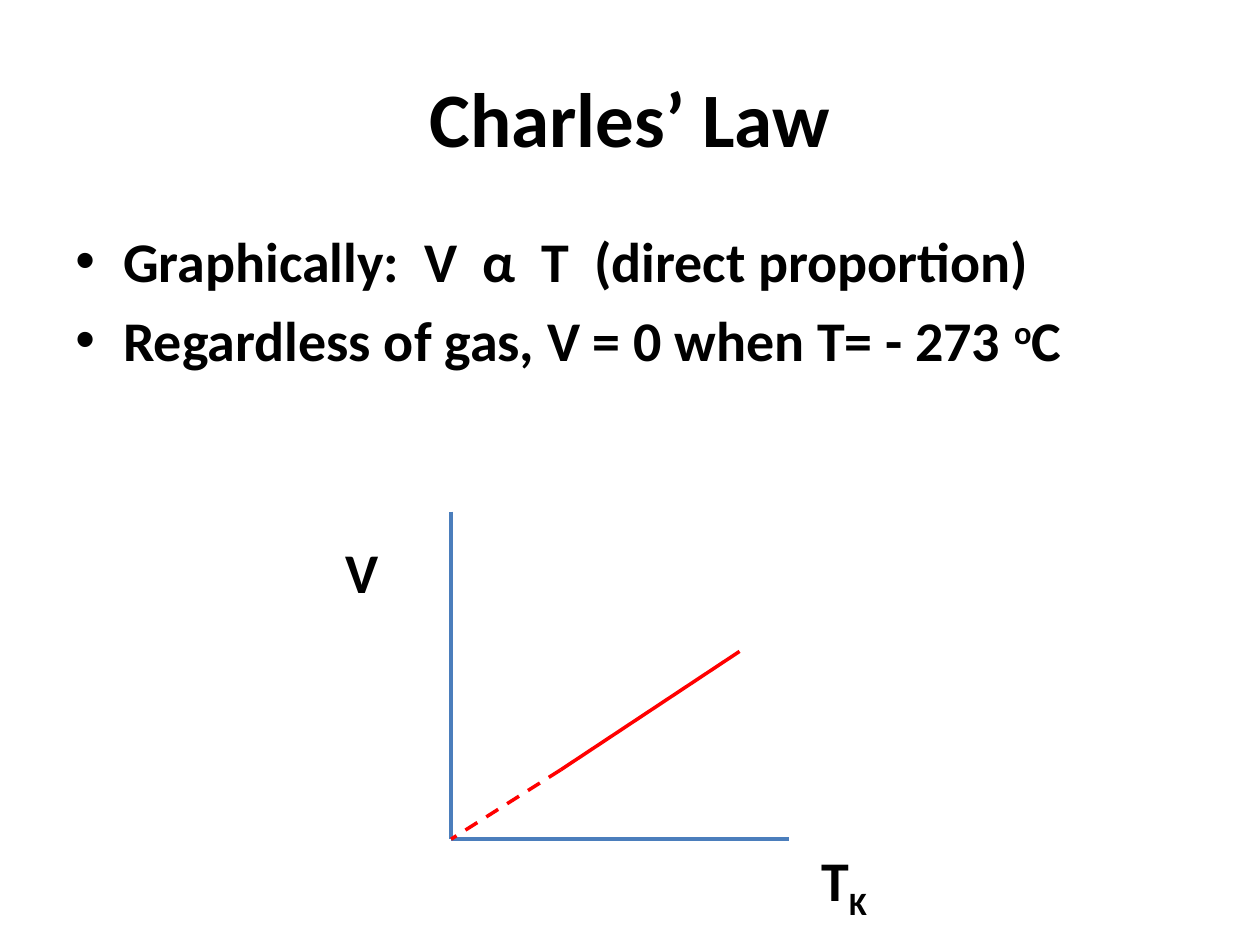
import pptx
import pptx.dml.color
import pptx.enum.dml
import pptx.enum.shapes
import pptx.enum.text
import pptx.oxml.ns
import pptx.util
from lxml import etree

Inches = pptx.util.Inches
Pt = pptx.util.Pt
BLACK = pptx.dml.color.RGBColor(0x00, 0x00, 0x00)
AXIS_BLUE = pptx.dml.color.RGBColor(0x4B, 0x7E, 0xBC)
PLOT_RED = pptx.dml.color.RGBColor(0xFF, 0x00, 0x00)
FONT = "Calibri"
SUPERSCRIPT, SUBSCRIPT = 30000, -25000

TITLE = [("Charles’ Law", 0)]
BULLETS = [
    [("Graphically:  V  α  T  (direct proportion)", 0)],
    [("Regardless of gas, V = 0 when T= - 273 ", 0), ("o", SUPERSCRIPT), ("C", 0)],
]
ORIGIN = (3.58, 6.66)
VOLUME_TOP = (3.58, 4.06)
TEMPERATURE_END = (6.26, 6.66)
MEASURED_START = (4.45, 6.11)
MEASURED_END = (5.87, 5.17)
AXES = [(VOLUME_TOP, ORIGIN), (TEMPERATURE_END, ORIGIN)]
AXIS_LABELS = [
    ((2.64, 4.22), [("V", 0)]),
    ((6.42, 6.66), [("T", 0), ("K", SUBSCRIPT)]),
]
LABEL_SIZE = (0.87, 0.64)


def write_paragraph(para, spans, size):
    para.font.name = FONT
    para.font.size = Pt(size)
    para.font.bold = True
    para.font.color.rgb = BLACK
    for text, baseline in spans:
        span = para.add_run()
        span.text = text
        if baseline:
            span.font._element.set("baseline", str(baseline))


def add_bullet(para):
    properties = para._p.get_or_add_pPr()
    properties.set("marL", str(Inches(0.38)))
    properties.set("indent", str(-Inches(0.38)))
    para.space_before = Pt(6.4)
    bullet_font = etree.Element(pptx.oxml.ns.qn("a:buFont"), typeface="Arial")
    bullet = etree.Element(pptx.oxml.ns.qn("a:buChar"), char="•")
    position = len(properties.findall(pptx.oxml.ns.qn("a:spcBef")))
    properties.insert(position, bullet_font)
    properties.insert(position + 1, bullet)


def add_text_box(shapes, position, size):
    box = shapes.add_textbox(*map(Inches, position + size))
    box.text_frame.word_wrap = True
    return box


def add_line(shapes, start, end, color, dash=None):
    line = shapes.add_connector(
        pptx.enum.shapes.MSO_CONNECTOR.STRAIGHT, *map(Inches, start + end))
    line.line.color.rgb = color
    line.line.width = Pt(2)
    if dash is not None:
        line.line.dash_style = dash
    etree.SubElement(line._element.spPr, pptx.oxml.ns.qn("a:effectLst"))


def main():
    deck = pptx.Presentation()
    deck.slide_width, deck.slide_height = Inches(10), Inches(7.5)
    page = deck.slides.add_slide(deck.slide_layouts.get_by_name("Title Only"))

    title = page.shapes.title
    title.left, title.top = Inches(0.5), Inches(0.3)
    title.width, title.height = Inches(9), Inches(1.25)
    title.text_frame.vertical_anchor = pptx.enum.text.MSO_ANCHOR.MIDDLE
    heading = title.text_frame.paragraphs[0]
    heading.alignment = pptx.enum.text.PP_ALIGN.CENTER
    write_paragraph(heading, TITLE, 44)

    body = add_text_box(page.shapes, (0.5, 1.75), (9, 2.47))
    for index, spans in enumerate(BULLETS):
        frame = body.text_frame
        para = frame.add_paragraph() if index else frame.paragraphs[0]
        write_paragraph(para, spans, 32)
        add_bullet(para)

    graph = page.shapes.add_group_shape()
    for start, end in AXES:
        add_line(graph.shapes, start, end, AXIS_BLUE)
    for position, spans in AXIS_LABELS:
        label = add_text_box(graph.shapes, position, LABEL_SIZE)
        label.text_frame.auto_size = pptx.enum.text.MSO_AUTO_SIZE.SHAPE_TO_FIT_TEXT
        write_paragraph(label.text_frame.paragraphs[0], spans, 32)

    add_line(page.shapes, MEASURED_START, ORIGIN, PLOT_RED,
             pptx.enum.dml.MSO_LINE.DASH)
    add_line(page.shapes, MEASURED_END, MEASURED_START, PLOT_RED)
    deck.save("out.pptx")


if __name__ == "__main__":
    main()
